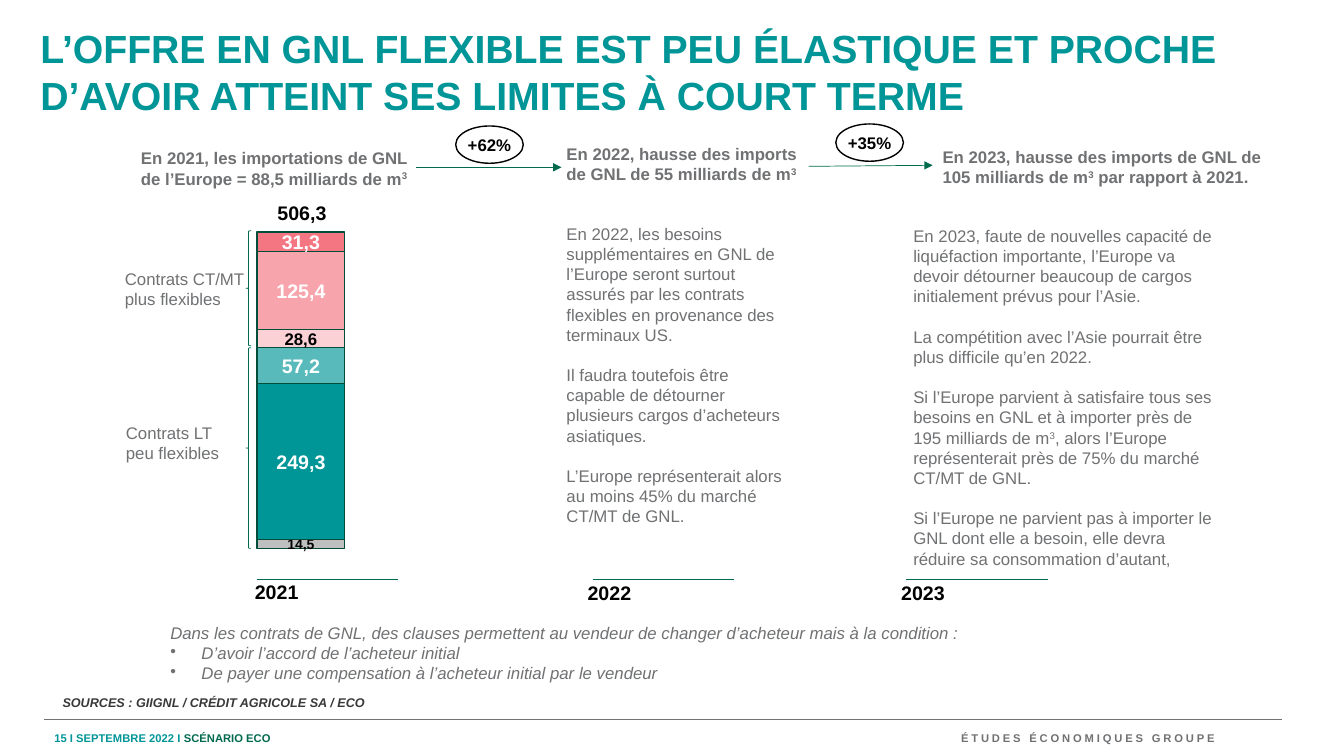
from lxml.etree import SubElement
from pptx import Presentation
from pptx.dml.color import RGBColor
from pptx.enum.shapes import MSO_CONNECTOR, MSO_SHAPE
from pptx.enum.text import MSO_ANCHOR, MSO_AUTO_SIZE, PP_ALIGN
from pptx.oxml.ns import qn
from pptx.util import Inches, Pt

TEAL = RGBColor(0x00, 0x95, 0x97)
GREEN = RGBColor(0x00, 0x6A, 0x4E)
EDGE = RGBColor(0x00, 0x4E, 0x3A)
GREY = RGBColor(0x70, 0x71, 0x73)
DARK = RGBColor(0x38, 0x38, 0x3A)
BLACK = RGBColor(0x00, 0x00, 0x00)
WHITE = RGBColor(0xFF, 0xFF, 0xFF)
SILVER = RGBColor(0xBF, 0xBF, 0xBF)
AQUA = RGBColor(0x58, 0xBA, 0xBA)
BLUSH = RGBColor(0xFB, 0xD1, 0xD5)
PINK = RGBColor(0xF8, 0xA4, 0xAC)
CORAL = RGBColor(0xF4, 0x76, 0x82)

# Contract volumes from the foot of the bar up: label, fill, ink, size
STACK = [
    ("14,5", SILVER, BLACK, 10),
    ("249,3", TEAL, WHITE, 14),
    ("57,2", AQUA, WHITE, 14),
    ("28,6", BLUSH, BLACK, 12),
    ("125,4", PINK, WHITE, 14),
    ("31,3", CORAL, WHITE, 14),
]
BAR_LEFT, BAR_WIDTH, BAR_FOOT = 2.55, 0.87, 5.44
SCALE = 3.14 / 506.3

# Text blocks; a caret opens and closes a superscript
HEADS = [
    ((1.3, 1.42, 3.04, 0.5),
     "En 2021, les importations de GNL de l’Europe = 88,5 milliards de m^3^"),
    ((5.52, 1.38, 2.57, 0.5),
     "En 2022, hausse des imports de GNL de 55 milliards de m^3^"),
    ((9.25, 1.41, 3.41, 0.5),
     "En 2023, hausse des imports de GNL de 105 milliards de m^3^ par rapport à 2021."),
]
NOTES = [
    ((5.52, 2.17, 2.43, 3.13), [
        "En 2022, les besoins supplémentaires en GNL de l’Europe seront surtout "
        "assurés par les contrats flexibles en provenance des terminaux US.",
        "Il faudra toutefois être capable de détourner plusieurs cargos "
        "d’acheteurs asiatiques.",
        "L’Europe représenterait alors au moins 45% du marché CT/MT de GNL.",
    ]),
    ((8.96, 2.19, 3.24, 3.53), [
        "En 2023, faute de nouvelles capacité de liquéfaction importante, l’Europe "
        "va devoir détourner beaucoup de cargos initialement prévus pour l’Asie.",
        "La compétition avec l’Asie pourrait être plus difficile qu’en 2022.",
        "Si l’Europe parvient à satisfaire tous ses besoins en GNL et à importer "
        "près de 195 milliards de m^3^, alors l’Europe représenterait près de 75% "
        "du marché CT/MT de GNL.",
        "Si l’Europe ne parvient pas à importer le GNL dont elle a besoin, elle "
        "devra réduire sa consommation d’autant,",
    ]),
]
CLAUSES = [
    "Dans les contrats de GNL, des clauses permettent au vendeur de changer "
    "d’acheteur mais à la condition :",
    "D’avoir l’accord de l’acheteur initial",
    "De payer une compensation à l’acheteur initial par le vendeur",
]
# Year, left of its line, left and top of its label
YEARS = [("2021", 2.55, 2.31, 5.7), ("2022", 5.88, 5.61, 5.71), ("2023", 8.99, 8.72, 5.71)]
GROUPS = [
    ("Contrats LT peu flexibles", (1.15, 4.14, 1.18, 0.5), (2.44, 3.45, 0.05, 1.99)),
    ("Contrats CT/MT plus flexibles", (1.14, 2.62, 1.41, 0.5), (2.44, 2.29, 0.05, 1.14)),
]
RISES = [
    ("+62%", (4.52, 1.25, 0.67, 0.37), (4.13, 1.66, 5.57, 1.66)),
    ("+35%", (8.29, 1.23, 0.67, 0.37), (8.02, 1.65, 9.25, 1.64)),
]


def style(para, size, ink, bold=False, slant=False, align=PP_ALIGN.LEFT):
    para.alignment = align
    font = para.font
    font.name, font.size = "Arial", Pt(size)
    font.bold, font.italic = bold, slant
    font.color.rgb = ink


def write(para, text):
    for turn, part in enumerate(text.split("^")):
        if part:
            run = para.add_run()
            run.text = part
            if turn % 2:
                run.font._element.set("baseline", "30000")


def add_text(slide, box, texts, size, ink, gap=0, anchor=MSO_ANCHOR.TOP, **look):
    frame = slide.shapes.add_textbox(*map(Inches, box)).text_frame
    frame.word_wrap = True
    frame.vertical_anchor = anchor
    for rank, text in enumerate(texts):
        para = frame.add_paragraph() if rank else frame.paragraphs[0]
        write(para, text)
        if rank and gap:
            para.space_before = Pt(gap)
        style(para, size, ink, **look)
    return frame


def add_form(slide, kind, box, edge, width, fill=None, text="", size=12, ink=BLACK):
    form = slide.shapes.add_shape(kind, *map(Inches, box))
    form.shadow.inherit = False
    form.line.color.rgb, form.line.width = edge, Pt(width)
    if fill is None:
        form.fill.background()
    else:
        form.fill.solid()
        form.fill.fore_color.rgb = fill
    if text:
        frame = form.text_frame
        frame.margin_left = frame.margin_right = 0
        frame.margin_top = frame.margin_bottom = 0
        frame.vertical_anchor = MSO_ANCHOR.MIDDLE
        write(frame.paragraphs[0], text)
        style(frame.paragraphs[0], size, ink, bold=True, align=PP_ALIGN.CENTER)


def add_line(slide, ends, ink, arrow=False):
    line = slide.shapes.add_connector(MSO_CONNECTOR.STRAIGHT, *map(Inches, ends))
    line.line.color.rgb, line.line.width = ink, Pt(0.5)
    if arrow:
        SubElement(line.line._get_or_add_ln(), qn("a:tailEnd"), type="triangle")
    SubElement(line._element.spPr, qn("a:effectLst"))


def fill_holder(holder, box, text, size, ink, **look):
    holder.left, holder.top, holder.width, holder.height = map(Inches, box)
    frame = holder.text_frame
    frame.auto_size = MSO_AUTO_SIZE.NONE
    frame.vertical_anchor = MSO_ANCHOR.TOP
    para = frame.paragraphs[0]
    write(para, text)
    set_bullet(para, 0)
    para.space_before = Pt(0)
    style(para, size, ink, bold=True, **look)


def set_bullet(para, indent, mark=None):
    props = para._p.get_or_add_pPr()
    props.set("marL", str(Inches(indent)))
    props.set("indent", str(-Inches(indent)))
    if mark:
        SubElement(props, qn("a:buChar"), char=mark)
    else:
        SubElement(props, qn("a:buNone"))


def add_footer(slide):
    right = add_text(slide, (7.58, 7.15, 4.57, 0.34), ["ÉTUDES ÉCONOMIQUES GROUPE"], 8, GREY,
                     anchor=MSO_ANCHOR.MIDDLE, bold=True, align=PP_ALIGN.RIGHT)
    right.paragraphs[0].runs[0].font._element.set("spc", "200")
    add_line(slide, (0.44, 7.14, 12.72, 7.14), GREY)
    left = add_text(slide, (0.44, 7.18, 5.59, 0.28), ["15 Ι SEPTEMBRE 2022 Ι "], 8, TEAL,
                    anchor=MSO_ANCHOR.MIDDLE, bold=True)
    name = left.paragraphs[0].add_run()
    name.text = "SCÉNARIO ECO"
    name.font.color.rgb = GREEN


def add_stack(slide):
    foot = BAR_FOOT
    for label, fill, ink, size in STACK:
        height = float(label.replace(",", ".")) * SCALE
        foot -= height
        add_form(slide, MSO_SHAPE.RECTANGLE, (BAR_LEFT, foot, BAR_WIDTH, height),
                 EDGE, 1, fill, label, size, ink)
    add_text(slide, (2.56, 1.94, BAR_WIDTH, 0.34), ["506,3"], 14, BLACK,
             bold=True, align=PP_ALIGN.CENTER)
    for text, box, brace in GROUPS:
        add_form(slide, MSO_SHAPE.LEFT_BRACE, brace, GREEN, 0.5)
        add_text(slide, box, [text], 12, GREY)


def main():
    deck = Presentation()
    deck.slide_width, deck.slide_height = Inches(13.33), Inches(7.5)
    slide = deck.slides.add_slide(deck.slide_layouts[1])
    add_footer(slide)

    # Title and sources
    title, source = slide.placeholders
    fill_holder(title, (0.3, 0.19, 12.5, 1.04),
                "L’OFFRE EN GNL FLEXIBLE EST PEU ÉLASTIQUE ET PROCHE "
                "D’AVOIR ATTEINT SES LIMITES À COURT TERME", 28, TEAL)
    title.fill.solid()
    title.fill.fore_color.rgb = WHITE
    fill_holder(source, (0.52, 6.84, 8.05, 0.24),
                "SOURCES : GIIGNL / CRÉDIT AGRICOLE SA / ECO", 9, DARK, slant=True)

    add_stack(slide)

    # Contract clauses
    clauses = add_text(slide, (1.59, 6.13, 10.61, 0.71), CLAUSES, 12, GREY, slant=True)
    for para in clauses.paragraphs[1:]:
        set_bullet(para, 0.31, "•")

    # Headings, years and rises
    for box, text in HEADS:
        add_text(slide, box, [text], 12, GREY, bold=True)
    for year, start, left, top in YEARS:
        add_line(slide, (start, 5.75, start + 1.4, 5.75), GREEN)
        add_text(slide, (left, top, 0.87, 0.34), [year], 14, BLACK,
                 bold=True, align=PP_ALIGN.CENTER)
    for text, oval, ends in RISES:
        add_line(slide, ends, GREEN, arrow=True)
        add_form(slide, MSO_SHAPE.OVAL, oval, BLACK, 1, text=text)

    # Comments by year
    for box, texts in NOTES:
        add_text(slide, box, texts, 12, GREY, gap=14.4)

    deck.save("out.pptx")


if __name__ == "__main__":
    main()
